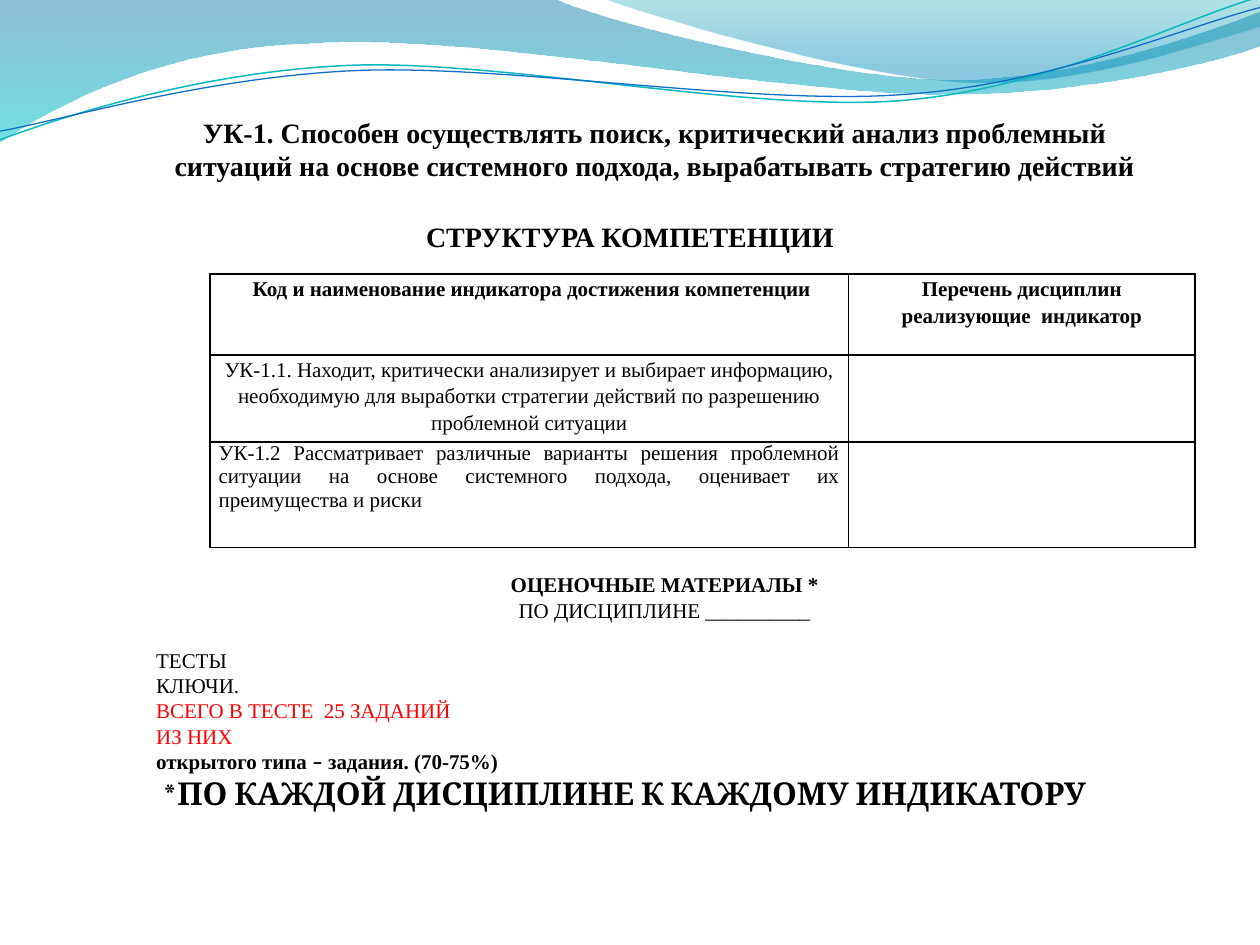
from dataclasses import dataclass
from typing import Optional

from lxml.etree import SubElement
from pptx import Presentation
from pptx.dml.color import RGBColor
from pptx.enum.text import MSO_ANCHOR, PP_ALIGN
from pptx.oxml.ns import qn
from pptx.util import Pt

SERIF = "Times New Roman"
BLACK, RED = "000000", "FF0000"
LEFT, MID, JUST = PP_ALIGN.LEFT, PP_ALIGN.CENTER, PP_ALIGN.JUSTIFY
Step = tuple[float, ...]


@dataclass
class Stop:
    at: float
    color: str
    alpha: int


@dataclass
class Wave:
    """Outline in points; a step of two numbers is a line, of six a curve."""
    start: Step
    steps: list[Step]
    stops: Optional[list[Stop]] = None
    color: str = BLACK
    width: float = 0


@dataclass
class Span:
    text: str
    bold: bool = False
    color: str = BLACK
    size: float = 12
    font: str = SERIF


@dataclass
class Line:
    spans: list[Span]
    align: PP_ALIGN = LEFT
    space: float = 1.0
    before: float = 0
    indent: float = 0


@dataclass
class Box:
    left: float
    top: float
    width: float
    height: float
    lines: list[Line]
    anchor: MSO_ANCHOR = MSO_ANCHOR.MIDDLE
    wrap: bool = True


WAVES = [
    Wave((0, 0), [
        (316.8, -0.7),
        (342.7, 12.2, 478.1, 45.4, 545.8, 45.4),
        (614.2, 45.4, 689.8, 18.7, 720, 6.5),
        (720.7, 25.9),
        (707.8, 31.7, 626.4, 54.7, 537.1, 54),
        (447.8, 54, 275, 20.2, 185, 24.5),
        (92.9, 25.9, 33.1, 59.8, -0.7, 81.4),
    ], [Stop(0, "0074A1", 45), Stop(1, "00C6CF", 55)]),
    Wave((344.9, -0.7), [
        (366.5, 7.9, 491, 44.6, 553.7, 46.8),
        (616.3, 49.7, 691.9, 23, 720, 15.1),
        (720, 0),
    ], [Stop(0, "00A1A9", 30), Stop(0.8, "008BBF", 45)]),
    Wave((0, 79.9), [
        (34.6, 67, 113.8, 41, 199.4, 37.4),
        (284.4, 33.8, 427, 64.1, 513.4, 57.6),
        (599.8, 51.1, 675.4, 10.8, 718.6, -1.4),
    ], color="0AB8BF", width=0.85),
    Wave((0, 74.9), [
        (33.8, 69.1, 118.1, 43.9, 203.8, 40.3),
        (290.2, 36.7, 429.8, 60.5, 516.2, 54),
        (601.9, 48.2, 677.5, 15.1, 720, 4.3),
    ], color="0F6FC6", width=0.75),
]


def note(*spans: Span, align: PP_ALIGN = LEFT, before: float = 0) -> Line:
    return Line(list(spans), align, before=before, indent=34)


BOXES = [
    Box(87.8, 61.9, 572.4, 46.1, [Line([Span(
        "УК-1. Способен осуществлять поиск, критический анализ проблемный "
        "ситуаций на основе системного подхода, вырабатывать стратегию действий",
        True, size=16)], MID)]),
    Box(234.7, 121.7, 250.6, 26.6,
        [Line([Span("СТРУКТУРА КОМПЕТЕНЦИИ", True, size=16)], MID)], wrap=False),
    Box(48.2, 323.3, 629.3, 167, [
        note(Span("ОЦЕНОЧНЫЕ МАТЕРИАЛЫ *", True), align=MID),
        note(Span("ПО ДИСЦИПЛИНЕ __________"), align=MID),
        note(Span("ТЕСТЫ"), before=14.4),
        note(Span("КЛЮЧИ.")),
        note(Span("ВСЕГО В ТЕСТЕ  25 ЗАДАНИЙ", color=RED)),
        note(Span("ИЗ НИХ", color=RED)),
        note(Span("открытого типа ", True), Span("–", True, font="Calibri"),
             Span(" задания. (70-75%)", True)),
        note(Span(" *ПО КАЖДОЙ ДИСЦИПЛИНЕ К КАЖДОМУ ИНДИКАТОРУ",
                  True, size=18, font="Cambria")),
    ], MSO_ANCHOR.TOP),
]

COLS = [365, 198]
ROWS = [46.1, 49.7, 60.5]
CELLS = [
    [Line([Span(" Код и наименование индикатора достижения компетенции", True)], MID, 1.15),
     Line([Span("Перечень дисциплин реализующие  индикатор", True)], MID, 1.15)],
    [Line([Span("УК-1.1. Находит, критически анализирует и выбирает информацию, "
                "необходимую для выработки стратегии действий по разрешению "
                "проблемной ситуации")], MID, 1.15), None],
    [Line([Span("УК-1.2 Рассматривает различные варианты решения проблемной "
                "ситуации на основе системного подхода, оценивает их "
                "преимущества и риски")], JUST), None],
]


def rgb(code: str) -> RGBColor:
    return RGBColor.from_string(code)


def bend(shape, steps: list[Step]) -> None:
    """Turn the straight parts of the outline into curves where a step has handles."""
    parts = list(shape.element.spPr.iter(qn("a:lnTo")))
    for part, step in zip(parts, steps):
        if len(step) == 2:
            continue
        part.tag = qn("a:cubicBezTo")
        part.remove(part[0])
        for x, y in zip(step[::2], step[1::2]):
            SubElement(part, qn("a:pt"), x=str(Pt(x) - shape.left), y=str(Pt(y) - shape.top))


def draw_wave(slide, wave: Wave) -> None:
    dots = [(Pt(x), Pt(y)) for x, y in [wave.start] + [s[-2:] for s in wave.steps]]
    pen = slide.shapes.build_freeform(*dots[0], scale=1.0)
    pen.add_line_segments(dots[1:], close=bool(wave.stops))
    shape = pen.convert_to_shape()
    bend(shape, wave.steps)
    shape.shadow.inherit = False
    if not wave.stops:
        shape.fill.background()
        shape.line.color.rgb = rgb(wave.color)
        shape.line.width = Pt(wave.width)
        return
    shape.line.fill.background()
    shape.fill.gradient()
    shape.fill.gradient_angle = 270
    for part, stop in zip(shape.fill.gradient_stops, wave.stops):
        part.position = stop.at
        part.color.rgb = rgb(stop.color)
    tints = list(shape.element.spPr.iter(qn("a:srgbClr")))
    for tint, stop in zip(tints, wave.stops):
        SubElement(tint, qn("a:alpha"), val=str(stop.alpha * 1000))


def fill_text(frame, lines: list[Line]) -> None:
    for i, line in enumerate(lines):
        para = frame.add_paragraph() if i else frame.paragraphs[0]
        para.alignment, para.line_spacing = line.align, line.space
        para.space_before = Pt(line.before)
        para._p.get_or_add_pPr().set("indent", str(Pt(line.indent)))
        for span in line.spans:
            run = para.add_run()
            run.text = span.text
            font = run.font
            font.name, font.size, font.bold = span.font, Pt(span.size), span.bold
            font.color.rgb = rgb(span.color)


def draw_box(slide, box: Box) -> None:
    sides = (box.left, box.top, box.width, box.height)
    frame = slide.shapes.add_textbox(*map(Pt, sides)).text_frame
    frame.word_wrap, frame.vertical_anchor = box.wrap, box.anchor
    fill_text(frame, box.lines)


def edge_cell(cell) -> None:
    """Give the cell a black border and no fill."""
    props = cell._tc.get_or_add_tcPr()
    for side in ("lnL", "lnR", "lnT", "lnB"):
        edge = SubElement(props, qn(f"a:{side}"), w=str(Pt(1)))
        SubElement(SubElement(edge, qn("a:solidFill")), qn("a:srgbClr"), val=BLACK)
    cell.fill.background()


def draw_table(slide, left: float, top: float) -> None:
    sides = (left, top, sum(COLS), sum(ROWS))
    table = slide.shapes.add_table(len(ROWS), len(COLS), *map(Pt, sides)).table
    table.first_row = table.horz_banding = False
    for col, width in zip(table.columns, COLS):
        col.width = Pt(width)
    for row, height, lines in zip(table.rows, ROWS, CELLS):
        row.height = Pt(height)
        for cell, line in zip(row.cells, lines):
            cell.margin_left = cell.margin_right = Pt(5)
            cell.margin_top = cell.margin_bottom = Pt(0)
            edge_cell(cell)
            if line:
                fill_text(cell.text_frame, [line])


def main() -> None:
    deck = Presentation()
    deck.slide_width, deck.slide_height = Pt(720), Pt(540)
    slide = deck.slides.add_slide(deck.slide_layouts[6])
    for wave in WAVES:
        draw_wave(slide, wave)
    for box in BOXES:
        draw_box(slide, box)
    draw_table(slide, 120, 156.7)
    deck.save("out.pptx")


if __name__ == "__main__":
    main()
